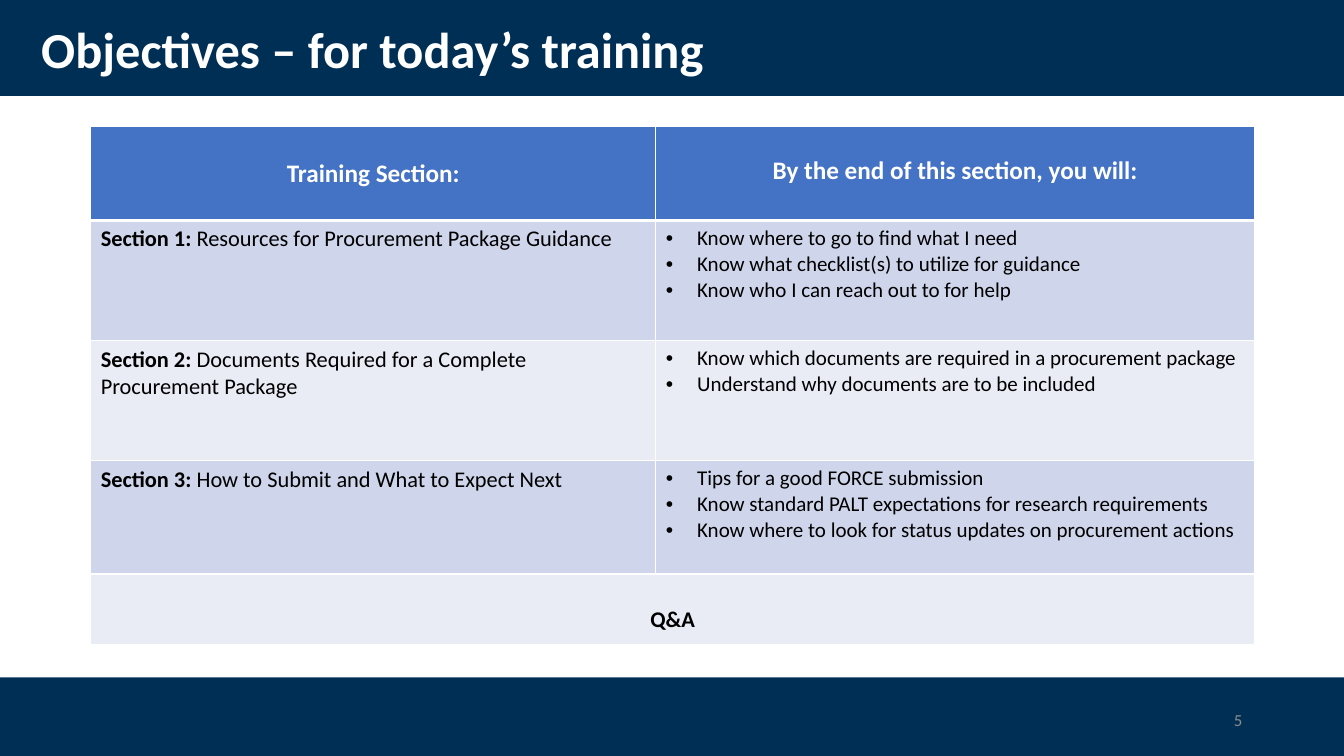
from lxml import etree
from pptx import Presentation
from pptx.dml.color import RGBColor
from pptx.enum.shapes import MSO_SHAPE
from pptx.enum.text import MSO_ANCHOR, PP_ALIGN
from pptx.oxml.ns import qn
from pptx.util import Inches, Pt

NAVY = RGBColor(0x00, 0x2F, 0x56)
BLUE = RGBColor(0x44, 0x72, 0xC4)
BAND_DARK = RGBColor(0xCF, 0xD5, 0xEA)
BAND_LIGHT = RGBColor(0xE9, 0xEB, 0xF5)
WHITE = RGBColor(0xFF, 0xFF, 0xFF)
BLACK = RGBColor(0x00, 0x00, 0x00)
GREY = RGBColor(0x8C, 0x8C, 0x8C)
FONT = "Calibri"
SLIDE_W, SLIDE_H = Inches(13.33), Inches(7.5)

# Table grid, in percent of the slide's width and height
COLS = [42.05, 44.55]
ROWS = [12.5, 15.9, 15.87, 15, 9.3]

SECTIONS = [
    ("Section 1: ", "Resources for Procurement Package Guidance", [
        "Know where to go to find what I need",
        "Know what checklist(s) to utilize for guidance",
        "Know who I can reach out to for help"]),
    ("Section 2: ", "Documents Required for a Complete Procurement Package", [
        "Know which documents are required in a procurement package",
        "Understand why documents are to be included"]),
    ("Section 3: ", "How to Submit and What to Expect Next", [
        "Tips for a good FORCE submission",
        "Know standard PALT expectations for research requirements",
        "Know where to look for status updates on procurement actions"]),
]


def px(percent):
    return int(SLIDE_W * percent / 100)


def py(percent):
    return int(SLIDE_H * percent / 100)


def add_run(p, text, size, color=BLACK, bold=False):
    r = p.add_run()
    r.text = text
    r.font.name = FONT
    r.font.size = Pt(size)
    r.font.bold = bold
    r.font.color.rgb = color


def add_band(slide, top, height):
    sp = slide.shapes.add_shape(MSO_SHAPE.RECTANGLE, 0, py(top), SLIDE_W, py(height))
    sp.shadow.inherit = False
    sp.fill.solid()
    sp.fill.fore_color.rgb = NAVY
    sp.line.fill.background()


def add_label(slide, left, top, width, height, text, size, color, bold, align):
    sp = slide.shapes.add_textbox(px(left), py(top), px(width), py(height))
    tf = sp.text_frame
    tf.word_wrap = True
    tf.vertical_anchor = MSO_ANCHOR.MIDDLE
    p = tf.paragraphs[0]
    p.alignment = align
    p.line_spacing = 0.9
    add_run(p, text, size, color, bold)


def style_cell(cell, fill, top_line=1, bottom_line=1):
    cell.fill.solid()
    cell.fill.fore_color.rgb = fill
    tcPr = cell._tc.get_or_add_tcPr()
    sides = [("a:lnL", 1), ("a:lnR", 1), ("a:lnT", top_line), ("a:lnB", bottom_line)]
    for i, (tag, width) in enumerate(sides):
        ln = etree.Element(qn(tag), w=str(Pt(width)))
        solid = etree.SubElement(ln, qn("a:solidFill"))
        etree.SubElement(solid, qn("a:srgbClr"), val=str(WHITE))
        tcPr.insert(i, ln)


def fill_centered(cell, text, size, color, margin_top):
    cell.margin_top = Inches(margin_top)
    p = cell.text_frame.paragraphs[0]
    p.alignment = PP_ALIGN.CENTER
    add_run(p, text, size, color, True)


def fill_bullets(cell, items):
    tf = cell.text_frame
    for i, item in enumerate(items):
        p = tf.add_paragraph() if i else tf.paragraphs[0]
        pPr = p._p.get_or_add_pPr()
        pPr.set("marL", str(Inches(0.31)))
        pPr.set("indent", str(-Inches(0.31)))
        etree.SubElement(pPr, qn("a:buFont"), typeface="Arial")
        etree.SubElement(pPr, qn("a:buChar"), char="•")
        add_run(p, item, 15)


def add_objectives(slide):
    frame = slide.shapes.add_table(len(ROWS), len(COLS), px(6.75), py(16.67),
                                   px(sum(COLS)), py(sum(ROWS)))
    table = frame.table
    table.first_row = table.horz_banding = False
    for col, width in zip(table.columns, COLS):
        col.width = px(width)
    for row, height in zip(table.rows, ROWS):
        row.height = py(height)

    # Fills and borders, with a thick line under the header
    fills = [BLUE, BAND_DARK, BAND_LIGHT, BAND_DARK, BAND_LIGHT]
    for i, (row, fill) in enumerate(zip(table.rows, fills)):
        for cell in row.cells:
            style_cell(cell, fill, 3 if i == 1 else 1, 3 if i == 0 else 1)

    # Header
    fill_centered(table.cell(0, 0), "Training Section:", 18, WHITE, 0.32)
    fill_centered(table.cell(0, 1), "By the end of this section, you will:", 18, WHITE, 0.29)

    # Sections
    for i, (name, topic, goals) in enumerate(SECTIONS, start=1):
        p = table.cell(i, 0).text_frame.paragraphs[0]
        add_run(p, name, 16, bold=True)
        add_run(p, topic, 16)
        fill_bullets(table.cell(i, 1), goals)

    # Closing row
    closing = table.cell(len(ROWS) - 1, 0)
    closing.merge(table.cell(len(ROWS) - 1, 1))
    fill_centered(closing, "Q&A", 16, BLACK, 0.32)


def main():
    prs = Presentation()
    prs.slide_width, prs.slide_height = SLIDE_W, SLIDE_H
    slide = prs.slides.add_slide(prs.slide_layouts[6])
    add_band(slide, 0, 12.7)
    add_band(slide, 89.6, 10.4)
    add_label(slide, 2.33, 2.4, 86.25, 9.07, "Objectives – for today’s training",
              36, WHITE, True, PP_ALIGN.LEFT)
    add_objectives(slide)
    add_label(slide, 70.67, 92.67, 22.5, 5.33, "5", 12, GREY, False, PP_ALIGN.RIGHT)
    prs.save("out.pptx")


if __name__ == "__main__":
    main()
